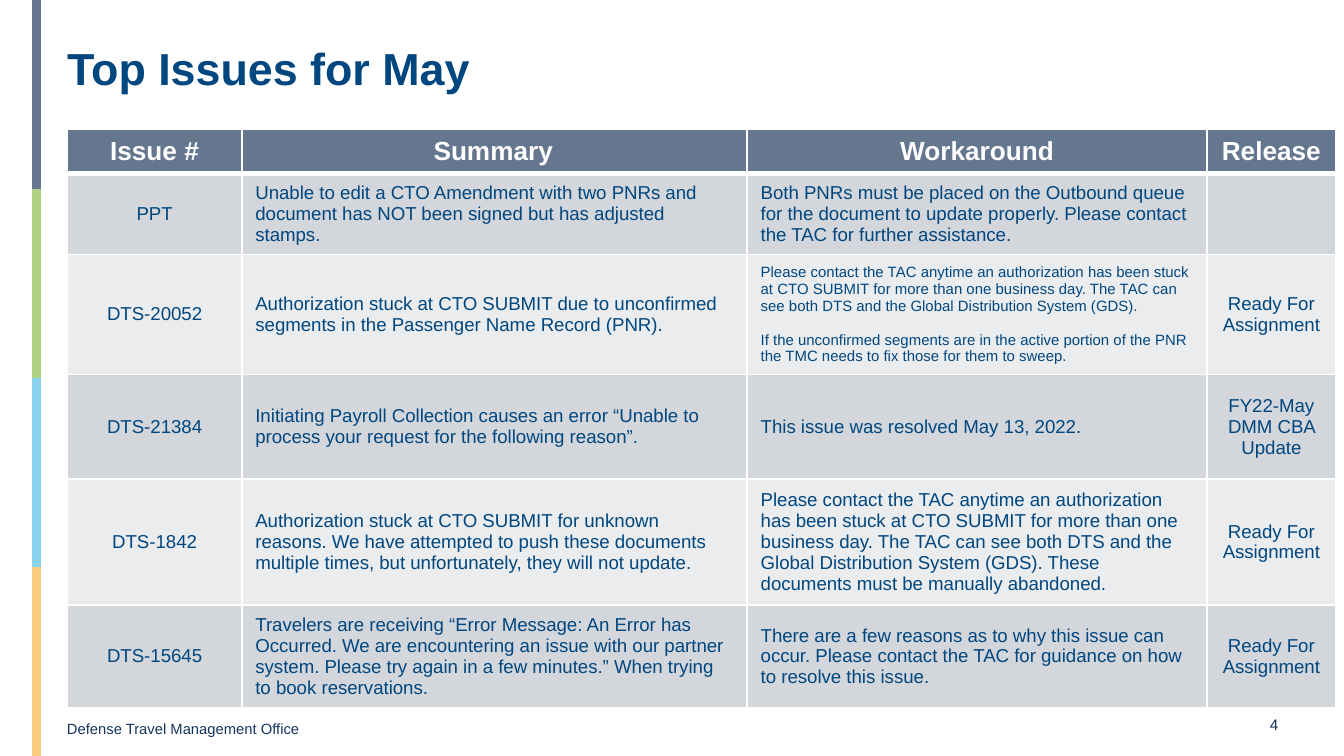
from dataclasses import dataclass

from lxml import etree
from pptx import Presentation
from pptx.dml.color import RGBColor
from pptx.enum.shapes import MSO_CONNECTOR
from pptx.enum.text import MSO_ANCHOR, PP_ALIGN
from pptx.oxml.ns import qn
from pptx.util import Inches, Pt

LEFT, CENTER = PP_ALIGN.LEFT, PP_ALIGN.CENTER
MIDDLE = MSO_ANCHOR.MIDDLE
STRAIGHT = MSO_CONNECTOR.STRAIGHT

TITLE = "Top Issues for May"
FOOTER = "Defense Travel Management Office"
PAGE = "4"
HEADERS = ["Issue #", "Summary", "Workaround", "Release"]
# Each cell is a list of paragraphs.
ISSUES = [
    (["PPT"],
     ["Unable to edit a CTO Amendment with two PNRs and document has NOT been signed "
      "but has adjusted stamps."],
     ["Both PNRs must be placed on the Outbound queue for the document to update "
      "properly. Please contact the TAC for further assistance."],
     []),
    (["DTS-20052"],
     ["Authorization stuck at CTO SUBMIT due to unconfirmed segments in the Passenger "
      "Name Record (PNR)."],
     ["Please contact the TAC anytime an authorization has been stuck at CTO SUBMIT for "
      "more than one business day. The TAC can see both DTS and the Global Distribution "
      "System (GDS).",
      "If the unconfirmed segments are in the active portion of the PNR the TMC needs to "
      "fix those for them to sweep."],
     ["Ready For Assignment"]),
    (["DTS-21384"],
     ["Initiating Payroll Collection causes an error “Unable to process your request for "
      "the following reason”."],
     ["This issue was resolved May 13, 2022."],
     ["FY22-May DMM CBA Update"]),
    (["DTS-1842"],
     ["Authorization stuck at CTO SUBMIT for unknown reasons. We have attempted to push "
      "these documents multiple times, but unfortunately, they will not update."],
     ["Please contact the TAC anytime an authorization has been stuck at CTO SUBMIT for "
      "more than one business day. The TAC can see both DTS and the Global Distribution "
      "System (GDS). These documents must be manually abandoned."],
     ["Ready For Assignment"]),
    (["DTS-15645"],
     ["Travelers are receiving “Error Message: An Error has Occurred. We are encountering "
      "an issue with our partner system. Please try again in a few minutes.” When trying "
      "to book reservations."],
     ["There are a few reasons as to why this issue can occur. Please contact the TAC for "
      "guidance on how to resolve this issue."],
     ["Ready For Assignment"]),
]
COL_WIDTHS = [1.3, 3.76, 3.42, 0.96]
COL_ALIGNS = [CENTER, LEFT, LEFT, CENTER]
COL_RIGHT_MARGINS = [0.1, 0.12, 0.1, 0.1]
ROW_HEIGHTS = [0.3, 0.54, 0.81, 0.78, 0.84, 0.69]
TABLE_HEIGHT = 4.31
SLIDE_W = 10
SLIDE_H = SLIDE_W * 9 / 16
BAR_X = 0.27


@dataclass(frozen=True)
class Theme:
    font: str = "Arial"
    blue: str = "00467F"
    navy: str = "15345D"
    white: str = "FFFFFF"
    slate: str = "65778F"
    bands: tuple = ("D3D6DB", "EAECEE")
    bars: tuple = ("65778F", "AED182", "8AD3ED", "FACC80")
    title: float = 24
    header: float = 14
    body: float = 10
    small: float = 8
    page: float = 8.2
    footer: float = 7.9


T = Theme()


def write(tf, paragraphs, size, color, bold=False, align=LEFT, gap=0):
    """Fill a text frame; gap is the space in points between paragraphs."""
    tf.word_wrap = True
    for i, text in enumerate(paragraphs):
        p = tf.add_paragraph() if i else tf.paragraphs[0]
        p.alignment = align
        if i:
            p.space_before = Pt(gap)
        r = p.add_run()
        r.text = text
        formats = {"name": T.font, "size": Pt(size), "bold": bold}
        for name, value in formats.items():
            setattr(r.font, name, value)
        r.font.color.rgb = RGBColor.from_string(color)


def add_text(s, box, text, size, color, inset=True, **kw):
    tf = s.shapes.add_textbox(*map(Inches, box)).text_frame
    if not inset:
        for side in ("left", "top", "right", "bottom"):
            setattr(tf, f"margin_{side}", 0)
    write(tf, [text], size, color, **kw)


def add_bars(s):
    step = SLIDE_H / len(T.bars)
    for i, color in enumerate(T.bars):
        bar = s.shapes.add_connector(
            STRAIGHT, Inches(BAR_X), Inches(i * step), Inches(BAR_X), Inches((i + 1) * step))
        bar.line.color.rgb = RGBColor.from_string(color)
        bar.line.width = Pt(5)
        etree.SubElement(bar._element.spPr, qn("a:effectLst"))


def set_borders(cell, widths):
    """Draw white borders; must run before the fill, which follows them in the XML."""
    tcPr = cell._tc.get_or_add_tcPr()
    for side, width in widths.items():
        ln = etree.SubElement(tcPr, qn(f"a:ln{side}"), w=str(Pt(width)))
        fill = etree.SubElement(ln, qn("a:solidFill"))
        etree.SubElement(fill, qn("a:srgbClr"), val=T.white)


def style_cell(cell, fill, row, col):
    cell.vertical_anchor = MIDDLE
    cell.margin_right = Inches(COL_RIGHT_MARGINS[col])
    set_borders(cell, {"L": 1, "R": 1, "T": 3 if row == 1 else 1, "B": 3 if row == 0 else 1})
    cell.fill.solid()
    cell.fill.fore_color.rgb = RGBColor.from_string(fill)


def add_issue_table(s):
    frame = s.shapes.add_table(
        len(ROW_HEIGHTS), len(COL_WIDTHS), Inches(0.5), Inches(0.96),
        Inches(sum(COL_WIDTHS)), Inches(TABLE_HEIGHT))
    table = frame.table
    for column, width in zip(table.columns, COL_WIDTHS):
        column.width = Inches(width)
    for row, height in zip(table.rows, ROW_HEIGHTS):
        row.height = Inches(height)
    frame.height = Inches(TABLE_HEIGHT)
    for c, text in enumerate(HEADERS):
        cell = table.cell(0, c)
        style_cell(cell, T.slate, 0, c)
        write(cell.text_frame, [text], T.header, T.white, bold=True, align=CENTER)
    for r, issue in enumerate(ISSUES, 1):
        for c, paragraphs in enumerate(issue):
            cell = table.cell(r, c)
            style_cell(cell, T.bands[(r - 1) % 2], r, c)
            size = T.small if len(paragraphs) > 1 else T.body
            write(cell.text_frame, paragraphs, size, T.blue, align=COL_ALIGNS[c], gap=9)


def main():
    prs = Presentation()
    prs.slide_width, prs.slide_height = Inches(SLIDE_W), Inches(SLIDE_H)
    s = prs.slides.add_slide(prs.slide_layouts[6])
    add_text(s, (0.4, 5.31, 8.94, 0.23), FOOTER, T.footer, T.navy)
    add_bars(s)
    add_text(s, (0.5, 0.3, 9.13, 0.55), TITLE, T.title, T.blue, inset=False, bold=True)
    add_text(s, (9.33, 5.32, 0.3, 0.19), PAGE, T.page, T.navy, inset=False, align=CENTER)
    add_issue_table(s)
    prs.save("out.pptx")


if __name__ == "__main__":
    main()
